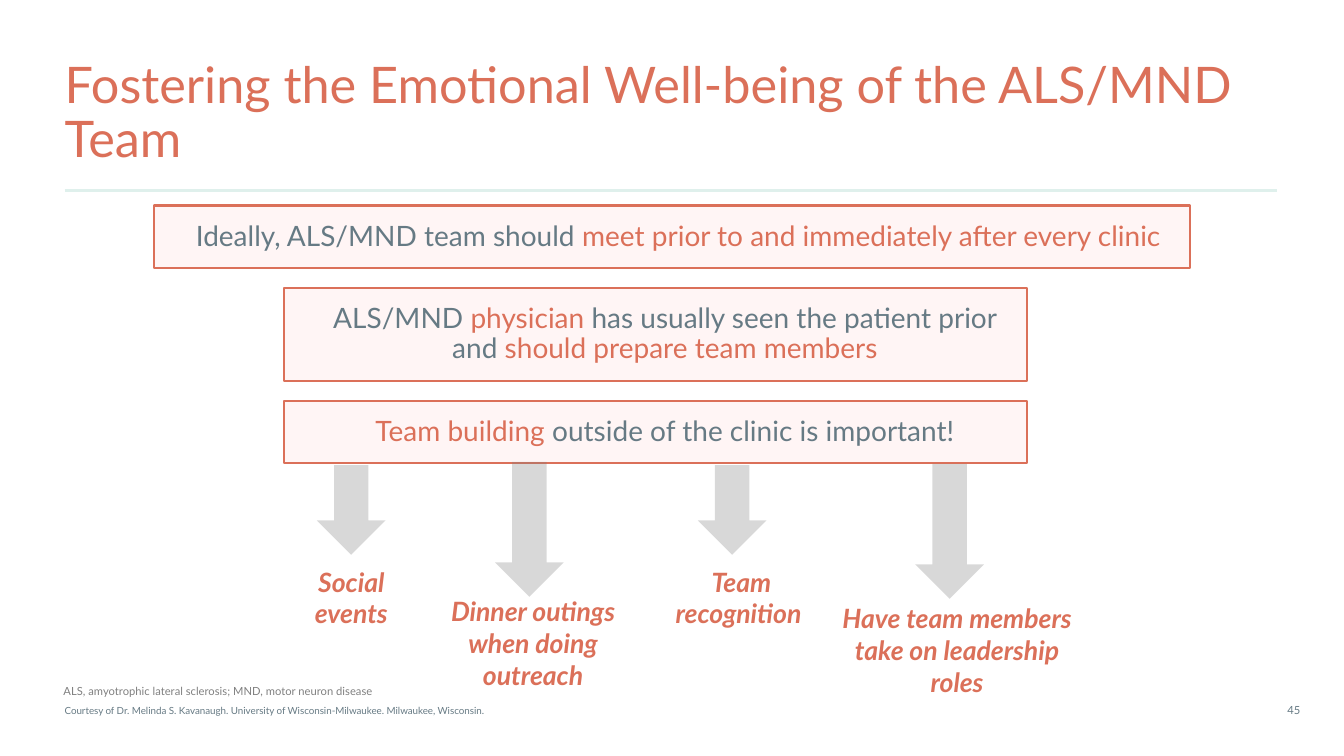
"""Build the slide on the emotional well-being of the ALS/MND team."""
from dataclasses import dataclass

from lxml import etree
from pptx import Presentation
from pptx.dml.color import RGBColor
from pptx.enum import shapes, text
from pptx.oxml import ns
from pptx.util import Cm, Pt


@dataclass(frozen=True)
class Theme:
    """Colours, font and type sizes."""
    font: str = "Lato"
    coral: str = "DB7059"
    slate: str = "667A84"
    blush: str = "FFF5F5"
    mint: str = "DFF0EC"
    grey: str = "808080"
    head: int = 36
    body: int = 20
    label: int = 19
    note: int = 8
    credit: int = 7


T = Theme()
TITLE = "Fostering the Emotional Well-being of the ALS/MND Team"
BOXES = [
    (3.89, 26.11, 1.57, [("Ideally, ALS/MND team should ", T.slate),
                         ("meet prior to and immediately after every clinic ", T.coral)]),
    (7.16, 18.72, 2.34, [("ALS/MND ", T.slate), ("physician", T.coral),
                         (" has usually seen the patient prior and ", T.slate),
                         ("should prepare team members", T.coral)]),
    (7.16, 18.72, 1.57, [("Team building ", T.coral),
                         ("outside of the clinic is important!", T.slate)]),
]
IDEAS = [
    ("Social events", (8.85, 11.72, 2.26), (6.86, 14.12, 3.99, 1.88)),
    ("Dinner outings when doing outreach", (13.34, 11.64, 3.4), (10.87, 14.86, 5.13, 2.69)),
    ("Team recognition ", (18.45, 11.72, 2.26), (16.69, 14.12, 3.99, 1.88)),
    ("Have team members take on leadership roles", (23.93, 11.69, 3.4),
     (20.93, 15.04, 6.38, 2.69)),
]
NOTE = "ALS, amyotrophic lateral sclerosis; MND, motor neuron disease"
CREDIT = ("Courtesy of Dr. Melinda S. Kavanaugh. "
          "University of Wisconsin-Milwaukee. Milwaukee, Wisconsin.")
PAGE = "45"
LEFT, WIDE = 1.63, 30.55
TOP, GAP, RULE = 5.18, 0.51, 4.8
ARROW = 1.73
INSET = (0.25, 0.13, 0.25, 0.13)
FLUSH = (0, 0, 0, 0)
PAD = (0.89, 0.41, 0.41, 0.41)
MID = text.PP_ALIGN.CENTER


def rgb(code):
    """Turn a hex code into a colour."""
    return RGBColor.from_string(code)


def write(shape, runs, size, align=text.PP_ALIGN.LEFT, inset=INSET, lead=1.0,
          anchor=text.MSO_ANCHOR.TOP, wrap=True, strong=False):
    """Fill a shape with one paragraph of coloured runs."""
    frame = shape.text_frame
    frame.word_wrap = wrap
    frame.auto_size = text.MSO_AUTO_SIZE.NONE
    frame.vertical_anchor = anchor
    (frame.margin_left, frame.margin_top,
     frame.margin_right, frame.margin_bottom) = map(Cm, inset)
    para = frame.paragraphs[0]
    para.alignment = align
    para.line_spacing = lead
    for words, colour in runs:
        run = para.add_run()
        run.text = words
        run.font.name = T.font
        run.font.size = Pt(size)
        run.font.bold = run.font.italic = strong
        run.font.color.rgb = rgb(colour)


def label(slide, place, words, size, colour, **style):
    """Add a text box holding a single run."""
    box = slide.shapes.add_textbox(*map(Cm, place))
    write(box, [(words, colour)], size, **style)


def rule(slide):
    """Draw the line below the title."""
    line = slide.shapes.add_connector(
        shapes.MSO_CONNECTOR.STRAIGHT, Cm(LEFT), Cm(RULE), Cm(LEFT + WIDE), Cm(RULE))
    line.line.color.rgb = rgb(T.mint)
    line.line.width = Pt(1.5)
    etree.SubElement(line._element.spPr, ns.qn("a:effectLst"))


def stack(slide):
    """Stack the statement boxes with equal gaps."""
    top = TOP
    for left, width, height, runs in BOXES:
        box = slide.shapes.add_shape(shapes.MSO_SHAPE.RECTANGLE,
                                     *map(Cm, (left, top, width, height)))
        box.shadow.inherit = False
        box.fill.solid()
        box.fill.fore_color.rgb = rgb(T.blush)
        box.line.color.rgb = rgb(T.coral)
        box.line.width = Pt(1.5)
        write(box, runs, T.body, MID, PAD, 0.9)
        top += height + GAP


def arrow(slide, mid, top, size):
    """Draw a translucent arrow pointing down."""
    place = (mid - size / 2, top + (size - ARROW) / 2, size, ARROW)
    shape = slide.shapes.add_shape(shapes.MSO_SHAPE.RIGHT_ARROW, *map(Cm, place))
    shape.rotation = 90
    shape.shadow.inherit = False
    shape.line.fill.background()
    shape.fill.solid()
    shape.fill.fore_color.rgb = rgb(T.grey)
    tint = shape._element.spPr.find(ns.qn("a:solidFill"))[0]
    etree.SubElement(tint, ns.qn("a:alpha"), val="30000")


def main():
    """Lay out and save the slide."""
    deck = Presentation()
    deck.slide_width, deck.slide_height = Cm(33.87), Cm(19.05)
    slide = deck.slides.add_slide(deck.slide_layouts[5])
    title = slide.shapes.title
    title.left, title.top, title.width, title.height = map(Cm, (LEFT, 1.5, WIDE, 2.77))
    write(title, [(TITLE, T.coral)], T.head, inset=FLUSH, lead=0.9)
    rule(slide)
    stack(slide)
    for words, tip, place in IDEAS:
        arrow(slide, *tip)
        label(slide, place, words, T.label, T.coral, align=MID, strong=True)
    label(slide, (LEFT, 17.78, 28.27, 0.28), CREDIT, T.credit, T.slate,
          inset=FLUSH, lead=0.9, anchor=text.MSO_ANCHOR.BOTTOM)
    label(slide, (1.35, 17.12, 19.99, 0.61), NOTE, T.note, T.grey)
    label(slide, (32.18, 17.6, 0.86, 0.61), PAGE, T.note, T.slate, align=MID, wrap=False)
    deck.save("out.pptx")


if __name__ == "__main__":
    main()
